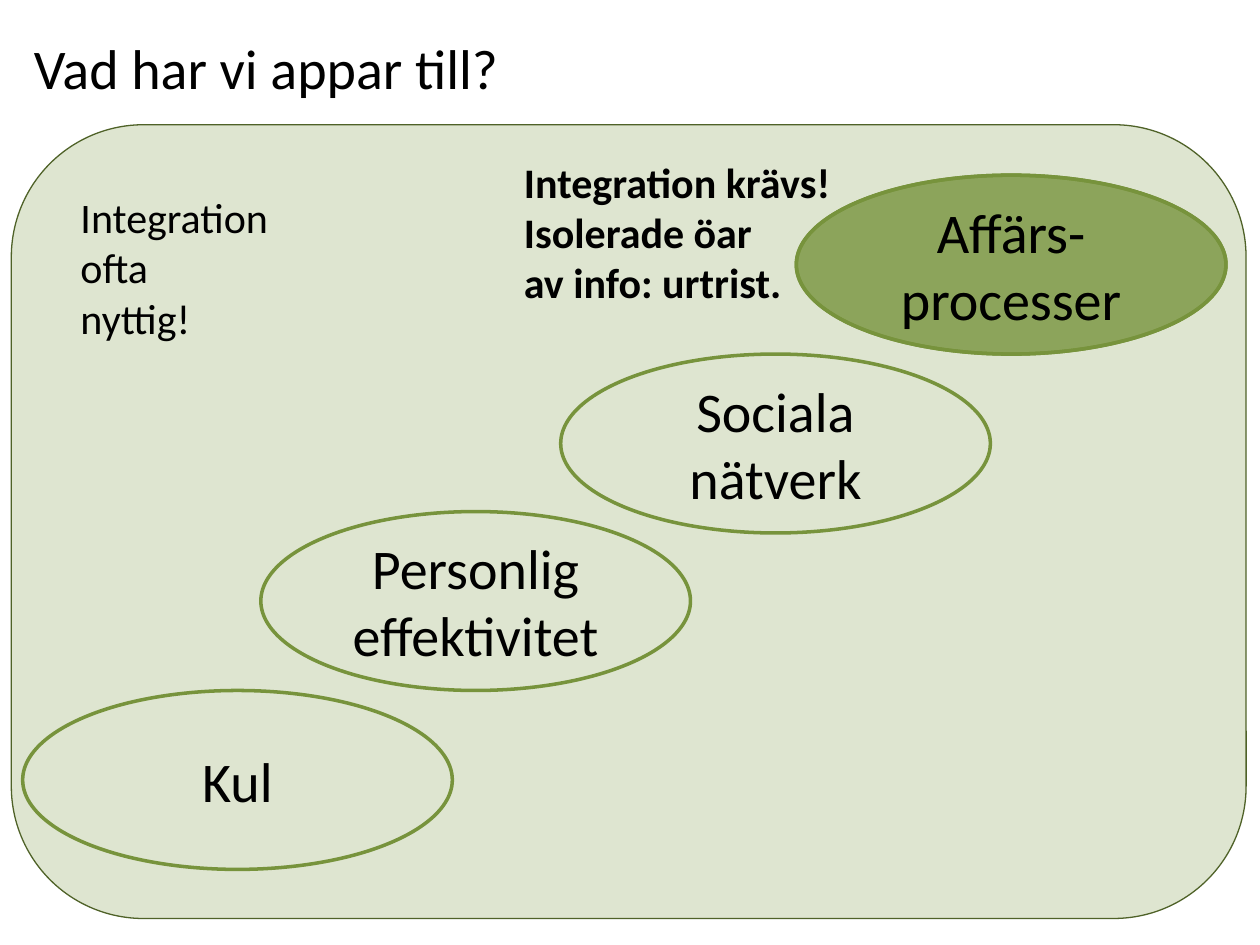
import pptx
import pptx.util
import pptx.dml.color
import pptx.enum.shapes
import pptx.enum.text
import pptx.oxml.ns
from lxml import etree

Inches = pptx.util.Inches
RGBColor = pptx.dml.color.RGBColor
Shape = pptx.enum.shapes.MSO_SHAPE
Align = pptx.enum.text.PP_ALIGN
Anchor = pptx.enum.text.MSO_ANCHOR
AutoSize = pptx.enum.text.MSO_AUTO_SIZE

GREEN = RGBColor(0x77, 0x93, 0x3C)
DARK_GREEN = RGBColor(0x4F, 0x62, 0x28)
BLACK = RGBColor(0, 0, 0)

OVAL_WIDTH, OVAL_HEIGHT = 3.41, 1.42
STEPS = [
    ("Kul", 0.18, 5.48),
    ("Personlig effektivitet", 2.07, 4.06),
    ("Sociala nätverk", 4.45, 2.81),
    ("Affärs-processer", 6.32, 1.39),
]


def write_text(frame, text, size=32, bold=False, align=Align.LEFT):
    """Newlines start paragraphs, vertical tabs break lines."""
    frame.text = text
    for para in frame.paragraphs:
        para.alignment = align
        for span in para.runs:
            span.font.name = "Calibri"
            span.font.size = pptx.util.Pt(size)
            span.font.bold = bold
            span.font.color.rgb = BLACK


def add_outline(page, kind, left, top, width, height, line, weight, opacity=0):
    """Add a green shape; opacity is in percent, 0 for no fill."""
    shape = page.shapes.add_shape(
        kind, Inches(left), Inches(top), Inches(width), Inches(height))
    shape.shadow.inherit = False
    shape.line.color.rgb = line
    shape.line.width = pptx.util.Pt(weight)
    if opacity:
        shape.fill.solid()
        shape.fill.fore_color.rgb = GREEN
        color = shape.fill._xPr.find(".//" + pptx.oxml.ns.qn("a:srgbClr"))
        etree.SubElement(color, pptx.oxml.ns.qn("a:alpha"), val=str(opacity * 1000))
    else:
        shape.fill.background()
    return shape


def add_step(page, text, left, top, opacity=0):
    oval = add_outline(page, Shape.OVAL, left, top, OVAL_WIDTH, OVAL_HEIGHT,
                       GREEN, 2, opacity)
    oval.text_frame.vertical_anchor = Anchor.MIDDLE
    write_text(oval.text_frame, text, align=Align.CENTER)


def add_text(page, text, left, top, width, height, wrap=True, grow=False, **style):
    box = page.shapes.add_textbox(
        Inches(left), Inches(top), Inches(width), Inches(height))
    frame = box.text_frame
    frame.word_wrap = wrap
    frame.auto_size = AutoSize.SHAPE_TO_FIT_TEXT if grow else AutoSize.NONE
    write_text(frame, text, **style)


def main():
    deck = pptx.Presentation()
    deck.slide_width, deck.slide_height = Inches(10), Inches(7.5)
    page = deck.slides.add_slide(deck.slide_layouts[6])

    # Backdrop
    add_outline(page, Shape.ROUNDED_RECTANGLE, 0.09, 0.99, 9.8, 6.3,
                DARK_GREEN, 0.75, opacity=24)

    # Staircase of app purposes
    for step in STEPS:
        add_step(page, *step)

    # Title and general remark
    add_text(page, "Vad har vi appar till?", 0.17, 0.22, 9, 1.25)
    add_text(page, "Integration \vofta\vnyttig!", 0.54, 1.47, 1.78, 1.31,
             wrap=False, grow=True, size=24)

    # Top step highlighted, with its remark
    add_step(page, *STEPS[-1], opacity=79)
    add_text(page, "Integration krävs!\nIsolerade öar \vav info: urtrist.",
             4.06, 1.19, 3.46, 1.31, grow=True, size=24, bold=True)

    deck.save("out.pptx")


if __name__ == "__main__":
    main()
